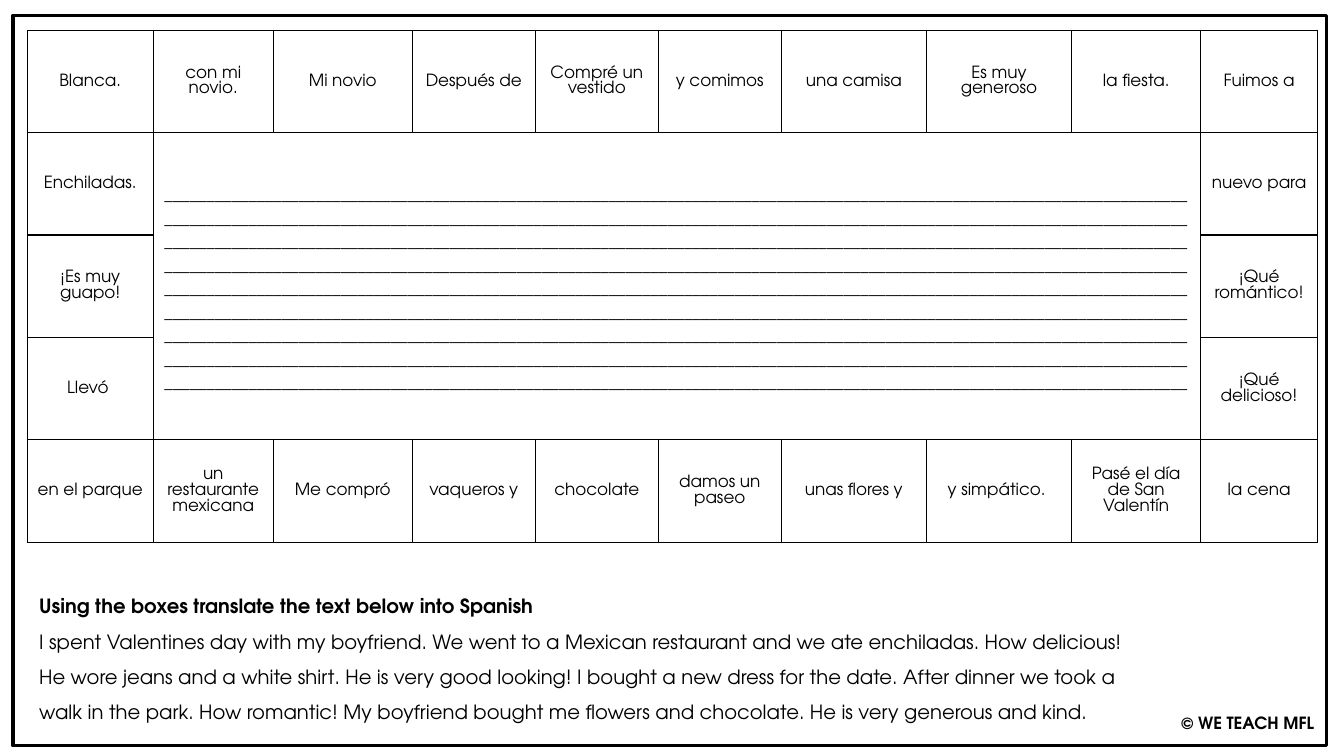
import pptx
import pptx.dml.color
import pptx.enum.shapes
import pptx.enum.text
import pptx.oxml
import pptx.util
from pptx.util import Inches

FONT = "TeX Gyre Adventor"
BLACK = "000000"
ALIGN = pptx.enum.text.PP_ALIGN
MIDDLE = pptx.enum.text.MSO_ANCHOR.MIDDLE
SHAPES = pptx.enum.shapes.MSO_SHAPE

TOP_PHRASES = ["Blanca.", "con mi novio.", "Mi novio", "Después de", "Compré un vestido",
               "y comimos", "una camisa", "Es muy generoso", "la fiesta.", "Fuimos a"]
SIDE_PHRASES = [("Enchiladas.", "nuevo para"), ("¡Es muy guapo!", "¡Qué romántico!"),
                ("Llevó ", "¡Qué delicioso!")]
BOTTOM_PHRASES = ["en el parque", "un restaurante mexicana", "Me compró", "vaqueros y",
                  "chocolate", "damos un paseo", "unas flores y", "y simpático. ",
                  "Pasé el día de San Valentín", "la cena"]
COLUMN_WIDTHS = [1.25, 1.19, 1.38, 1.22, 1.22, 1.22, 1.44, 1.44, 1.28, 1.16]
TABLE_HEIGHT = 5.08
WRITING_LINES, LINE_CHARACTERS = 9, 122

HEADING = "Using the boxes translate the text below into Spanish"
PASSAGE = ("I spent Valentines day with my boyfriend. We went to a Mexican restaurant and we ate "
           "enchiladas. How delicious! He wore jeans and a white shirt. He is very good looking! "
           "I bought a new dress for the date. After dinner we took a walk in the park. "
           "How romantic! My boyfriend bought me flowers and chocolate. "
           "He is very generous and kind.")


def colour(value):
    return pptx.dml.color.RGBColor.from_string(value)


def write(para, text, size, bold=False, **layout):
    for name, value in layout.items():
        setattr(para, name, value)
    span = para.add_run()
    span.text = text
    style = {"name": FONT, "size": pptx.util.Pt(size), "bold": bold}
    for name, value in style.items():
        setattr(span.font, name, value)
    span.font.color.rgb = colour(BLACK)


def add_outline(page, kind, left, top, width, height, line_width=None):
    box = page.shapes.add_shape(kind, Inches(left), Inches(top), Inches(width), Inches(height))
    box.shadow.inherit = False
    box.fill.background()
    if line_width:
        box.line.color.rgb = colour(BLACK)
        box.line.width = pptx.util.Pt(line_width)
    else:
        box.line.fill.background()
    return box


def fit_text(frame):
    frame.word_wrap = True
    frame.auto_size = pptx.enum.text.MSO_AUTO_SIZE.SHAPE_TO_FIT_TEXT


def add_borders(cell):
    properties = cell._tc.get_or_add_tcPr()
    for position, side in enumerate(("lnL", "lnR", "lnT", "lnB")):
        border = pptx.oxml.parse_xml(
            f'<a:{side} xmlns:a="http://schemas.openxmlformats.org/drawingml/2006/main" '
            f'w="{pptx.util.Pt(1)}"><a:solidFill><a:srgbClr val="{BLACK}"/></a:solidFill></a:{side}>')
        properties.insert(position, border)


def fill_cell(cell, text, **layout):
    cell.vertical_anchor = MIDDLE
    write(cell.text_frame.paragraphs[0], text, 12, alignment=ALIGN.CENTER, **layout)


def add_phrase_table(page):
    rows, columns = len(SIDE_PHRASES) + 2, len(COLUMN_WIDTHS)
    table = page.shapes.add_table(rows, columns, Inches(0.27), Inches(0.3),
                                  Inches(sum(COLUMN_WIDTHS)), Inches(TABLE_HEIGHT)).table
    table.first_row = table.horz_banding = False
    for column, width in zip(table.columns, COLUMN_WIDTHS):
        column.width = Inches(width)
    for row in table.rows:
        row.height = Inches(TABLE_HEIGHT / rows)
    for cell in table.iter_cells():
        cell.fill.background()
        add_borders(cell)

    # Phrases around the edge
    for row, phrases in ((0, TOP_PHRASES), (rows - 1, BOTTOM_PHRASES)):
        for column, phrase in enumerate(phrases):
            fill_cell(table.cell(row, column), phrase)
    for row, (left, right) in enumerate(SIDE_PHRASES, start=1):
        fill_cell(table.cell(row, 0), left)
        fill_cell(table.cell(row, columns - 1), right)

    # Writing space in the middle
    writing_space = table.cell(1, 1)
    writing_space.merge(table.cell(rows - 2, columns - 2))
    fill_cell(writing_space, "_" * (WRITING_LINES * LINE_CHARACTERS), line_spacing=1.5)


def add_instructions(page):
    box = page.shapes.add_textbox(Inches(0.29), Inches(5.73), Inches(11.06), Inches(1.47))
    frame = box.text_frame
    fit_text(frame)
    write(frame.paragraphs[0], HEADING, 14, bold=True, line_spacing=1.5)
    write(frame.add_paragraph(), PASSAGE, 14, line_spacing=1.5)


def add_copyright(page):
    box = add_outline(page, SHAPES.ROUNDED_RECTANGLE, 11.51, 7, 1.64, 0.34)
    fit_text(box.text_frame)
    box.text_frame.vertical_anchor = MIDDLE
    write(box.text_frame.paragraphs[0], "© WE TEACH MFL", 12, bold=True, alignment=ALIGN.RIGHT)


def main():
    deck = pptx.Presentation()
    deck.slide_width, deck.slide_height = Inches(13.33), Inches(7.5)
    page = deck.slides.add_slide(deck.slide_layouts[6])

    # Page frame and copyright line
    add_outline(page, SHAPES.RECTANGLE, 0.13, 0.15, 13.03, 7.25, line_width=2.25)
    add_copyright(page)

    # Phrase boxes and translation task
    add_phrase_table(page)
    add_instructions(page)
    deck.save("out.pptx")


if __name__ == "__main__":
    main()
